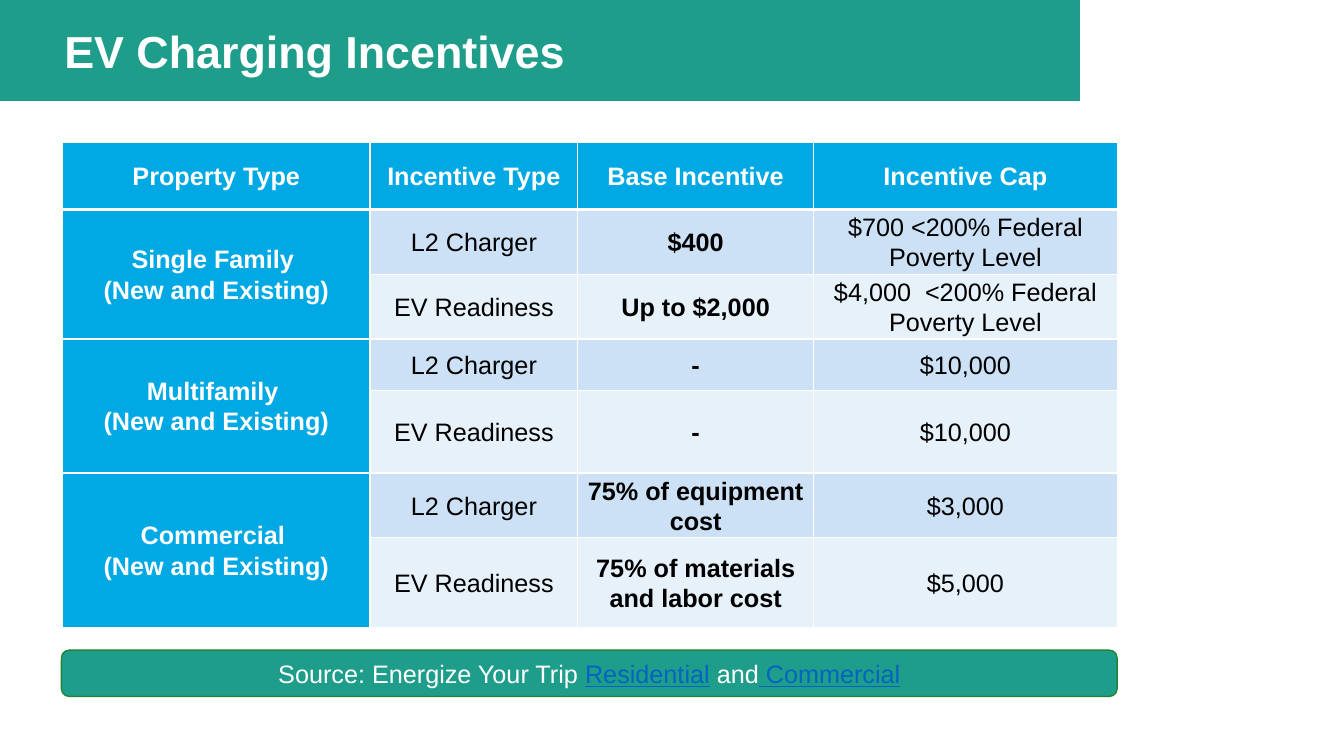
from dataclasses import dataclass

from lxml.etree import SubElement
from pptx import Presentation
from pptx.dml.color import RGBColor as Rgb
from pptx.enum.shapes import MSO_SHAPE as Shape
from pptx.enum.text import MSO_ANCHOR as Anchor, PP_ALIGN as Align
from pptx.oxml.ns import qn
from pptx.util import Inches, Pt


@dataclass(frozen=True)
class Theme:
    """Colours, font and type sizes of the slide."""
    font: str = "Arial"
    teal: str = "1E9D8B"
    outline: str = "218437"
    blue: str = "00A8E4"
    bands: tuple = ("CCE1F5", "E7F1FA")
    white: str = "FFFFFF"
    black: str = "000000"
    link: str = "0563C1"
    title_size: int = 32
    body_size: int = 18


def write(paragraph, text, *, font, size, color, bold=False, underline=False):
    """Add a formatted run to a paragraph."""
    run = paragraph.add_run()
    run.text = text
    run.font.name, run.font.size = font, Pt(size)
    run.font.bold, run.font.underline = bold, underline
    run.font.color.rgb = Rgb.from_string(color)


class IncentiveSlide:
    """Draws elements on one slide in one theme."""

    def __init__(self, slide, theme):
        """Keep the slide and its theme."""
        self.slide, self.theme = slide, theme

    def panel(self, kind, left, top, width, height, outline=None):
        """Add a teal panel and return it."""
        panel = self.slide.shapes.add_shape(
            kind, Inches(left), Inches(top), Inches(width), Inches(height))
        panel.shadow.inherit = False
        panel.fill.solid()
        panel.fill.fore_color.rgb = Rgb.from_string(self.theme.teal)
        if outline:
            panel.line.color.rgb = Rgb.from_string(outline)
            panel.line.width = Pt(1)
        else:
            panel.line.fill.background()
        return panel

    def heading(self, text, left, top, width, height):
        """Add the slide title."""
        frame = self.slide.shapes.add_textbox(
            Inches(left), Inches(top), Inches(width), Inches(height)).text_frame
        frame.word_wrap = True
        frame.paragraphs[0].line_spacing = 0.9
        write(frame.paragraphs[0], text, font=self.theme.font,
              size=self.theme.title_size, color=self.theme.white, bold=True)

    def source_bar(self, parts, left, top, width, height):
        """Add the source bar from pairs of text and link flag."""
        bar = self.panel(Shape.ROUNDED_RECTANGLE, left, top, width, height, self.theme.outline)
        frame = bar.text_frame
        frame.word_wrap = True
        frame.vertical_anchor = Anchor.MIDDLE
        frame.paragraphs[0].alignment = Align.CENTER
        for text, linked in parts:
            write(frame.paragraphs[0], text, font=self.theme.font, size=self.theme.body_size,
                  color=self.theme.link if linked else self.theme.white, underline=linked)

    def border(self, cell, **widths):
        """Draw white cell borders of the given widths in points."""
        properties = cell._tc.get_or_add_tcPr()
        for side in "LRTB":
            edge = SubElement(properties, qn(f"a:ln{side}"), w=str(Pt(widths.get(side, 1))))
            SubElement(SubElement(edge, qn("a:solidFill")), qn("a:srgbClr"), val=self.theme.white)

    def cell(self, cell, text, fill, color, bold, **widths):
        """Fill, border and write one table cell."""
        self.border(cell, **widths)
        cell.fill.solid()
        cell.fill.fore_color.rgb = Rgb.from_string(fill)
        cell.margin_left = cell.margin_right = cell.margin_top = cell.margin_bottom = 0
        cell.vertical_anchor = Anchor.MIDDLE
        for index, line in enumerate(text.split("\n")):
            frame = cell.text_frame
            paragraph = frame.add_paragraph() if index else frame.paragraphs[0]
            paragraph.alignment, paragraph.line_spacing = Align.CENTER, 1.07
            write(paragraph, line, font=self.theme.font, size=self.theme.body_size,
                  color=color, bold=bold)

    def table(self, headers, properties, left, top, widths, heights):
        """Add the incentive table with one merged label per property."""
        theme = self.theme
        table = self.slide.shapes.add_table(
            len(heights), len(widths), Inches(left), Inches(top),
            Inches(sum(widths)), Inches(sum(heights))).table
        for column, width in zip(table.columns, widths):
            column.width = Inches(width)
        for row, height in zip(table.rows, heights):
            row.height = Inches(height)
        for column, header in enumerate(headers):
            self.cell(table.cell(0, column), header, theme.blue, theme.white, True, B=3)
        for group, (label, incentives) in enumerate(properties):
            for offset, values in enumerate(incentives):
                row = 1 + 2 * group + offset
                rule = 3 if row == 1 else 1
                self.cell(table.cell(row, 0), "" if offset else label,
                          theme.blue, theme.white, True, T=rule)
                for column, value in enumerate(values, 1):
                    self.cell(table.cell(row, column), value, theme.bands[offset],
                              theme.black, column == 2, T=rule)
            table.cell(row - 1, 0).merge(table.cell(row, 0))


HEADERS = ("Property Type", "Incentive Type", "Base Incentive", "Incentive Cap")
PROPERTIES = (
    ("Single Family \n(New and Existing)", (
        ("L2 Charger", "$400", "$700 <200% Federal Poverty Level"),
        ("EV Readiness", "Up to $2,000", "$4,000  <200% Federal Poverty Level"))),
    ("Multifamily \n(New and Existing)", (
        ("L2 Charger", "-", "$10,000"),
        ("EV Readiness", "-", "$10,000"))),
    ("Commercial \n(New and Existing)", (
        ("L2 Charger", "75% of equipment cost", "$3,000"),
        ("EV Readiness", "75% of materials and labor cost", "$5,000"))),
)
SOURCE = (("Source: Energize Your Trip ", False), ("Residential", True),
          (" and", False), (" Commercial", True))


def main():
    """Build and save the slide."""
    deck = Presentation()
    deck.slide_width, deck.slide_height = Inches(13.33), Inches(7.5)
    page = IncentiveSlide(deck.slides.add_slide(deck.slide_layouts[6]), Theme())
    page.panel(Shape.RECTANGLE, 0, -0.01, 10.71, 1.01)
    page.heading("EV Charging Incentives", 0.54, 0.25, 6.43, 0.7)
    page.table(HEADERS, PROPERTIES, 0.62, 1.41, (3.05, 2.06, 2.34, 3.01),
               (0.67, 0.59, 0.59, 0.51, 0.82, 0.59, 0.89))
    page.source_bar(SOURCE, 0.61, 6.45, 10.47, 0.46)
    deck.save("out.pptx")


if __name__ == "__main__":
    main()
